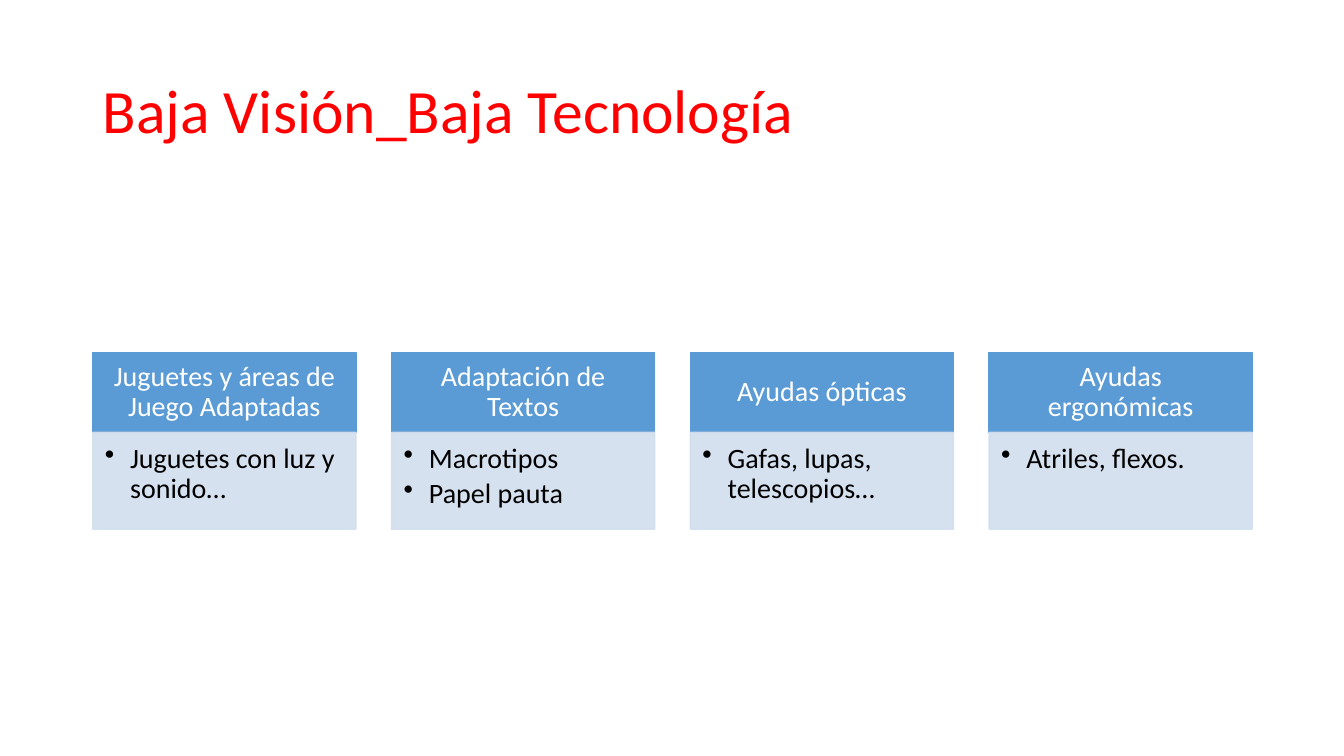
"""Build the slide on low-tech aids for low vision."""
from lxml.etree import SubElement
from pptx import Presentation
from pptx.dml.color import RGBColor
from pptx.enum.shapes import MSO_SHAPE
from pptx.enum.text import MSO_ANCHOR, MSO_AUTO_SIZE, PP_ALIGN
from pptx.oxml.ns import qn
from pptx.util import Inches, Pt

RED = RGBColor(0xFF, 0x00, 0x00)
BLUE = RGBColor(0x5B, 0x9B, 0xD5)
PALE_BLUE = RGBColor(0xD2, 0xDE, 0xEF)
WHITE = RGBColor(0xFF, 0xFF, 0xFF)
BLACK = RGBColor(0x00, 0x00, 0x00)

LEFT, WIDTH = 0.92, 11.5
COLUMN_WIDTH = 2.61
HEADER_TOP, HEADER_HEIGHT, BODY_HEIGHT = 3.5, 0.79, 0.96

AIDS = [
    ("Juguetes y áreas de Juego Adaptadas", ["Juguetes con luz y sonido…"]),
    ("Adaptación de Textos", ["Macrotipos", "Papel pauta"]),
    ("Ayudas ópticas", ["Gafas, lupas, telescopios…"]),
    ("Ayudas ergonómicas", ["Atriles, flexos."]),
]


def add_panel(left, top, height, color, insets, anchor):
    panel = slide.shapes.add_shape(
        MSO_SHAPE.RECTANGLE, Inches(left), Inches(top), Inches(COLUMN_WIDTH), Inches(height))
    panel.shadow.inherit = False
    panel.fill.solid()
    panel.fill.fore_color.rgb = color
    panel.line.color.rgb = color
    panel.line.width = Pt(1)
    frame = panel.text_frame
    frame.word_wrap = True
    frame.vertical_anchor = anchor
    frame.margin_left, frame.margin_top, frame.margin_right, frame.margin_bottom = map(Inches, insets)
    return panel


def format_paragraph(paragraph, size, color, alignment):
    paragraph.alignment = alignment
    paragraph.line_spacing = 0.9
    paragraph.font.name = "Calibri"
    paragraph.font.size = Pt(size)
    paragraph.font.color.rgb = color


deck = Presentation()
deck.slide_width, deck.slide_height = Inches(13.33), Inches(7.5)
slide = deck.slides.add_slide(deck.slide_layouts[5])

title = slide.shapes.title
title.left, title.top, title.width, title.height = map(Inches, (LEFT, 0.4, WIDTH, 1.45))
title.text_frame.text = "Baja Visión_Baja Tecnología"
title.text_frame.vertical_anchor = MSO_ANCHOR.MIDDLE
title.text_frame.auto_size = MSO_AUTO_SIZE.NONE
format_paragraph(title.text_frame.paragraphs[0], 44, RED, PP_ALIGN.LEFT)

column_step = (WIDTH - COLUMN_WIDTH) / (len(AIDS) - 1)
for column, (heading, examples) in enumerate(AIDS):
    left = LEFT + column * column_step
    header = add_panel(left, HEADER_TOP, HEADER_HEIGHT, BLUE,
                       (0.16, 0.09, 0.16, 0.09), MSO_ANCHOR.MIDDLE)
    header.text_frame.text = heading
    format_paragraph(header.text_frame.paragraphs[0], 20, WHITE, PP_ALIGN.CENTER)

    body = add_panel(left, HEADER_TOP + HEADER_HEIGHT, BODY_HEIGHT, PALE_BLUE,
                     (0.12, 0.12, 0.16, 0.17), MSO_ANCHOR.TOP)
    for color in body.element.spPr.iter(qn("a:srgbClr")):
        SubElement(color, qn("a:alpha"), val="90000")
    body.text_frame.text = "\n".join(examples)
    for example in body.text_frame.paragraphs:
        format_paragraph(example, 20, BLACK, PP_ALIGN.LEFT)
        example.level = 1
        example.space_after = Pt(3)
        properties = example._p.get_or_add_pPr()
        properties.set("marL", str(Inches(0.25)))
        properties.set("indent", str(Inches(-0.25)))
        bullet = properties.makeelement(qn("a:buChar"), {"char": "•"})
        properties.find(qn("a:defRPr")).addprevious(bullet)

deck.save("out.pptx")
